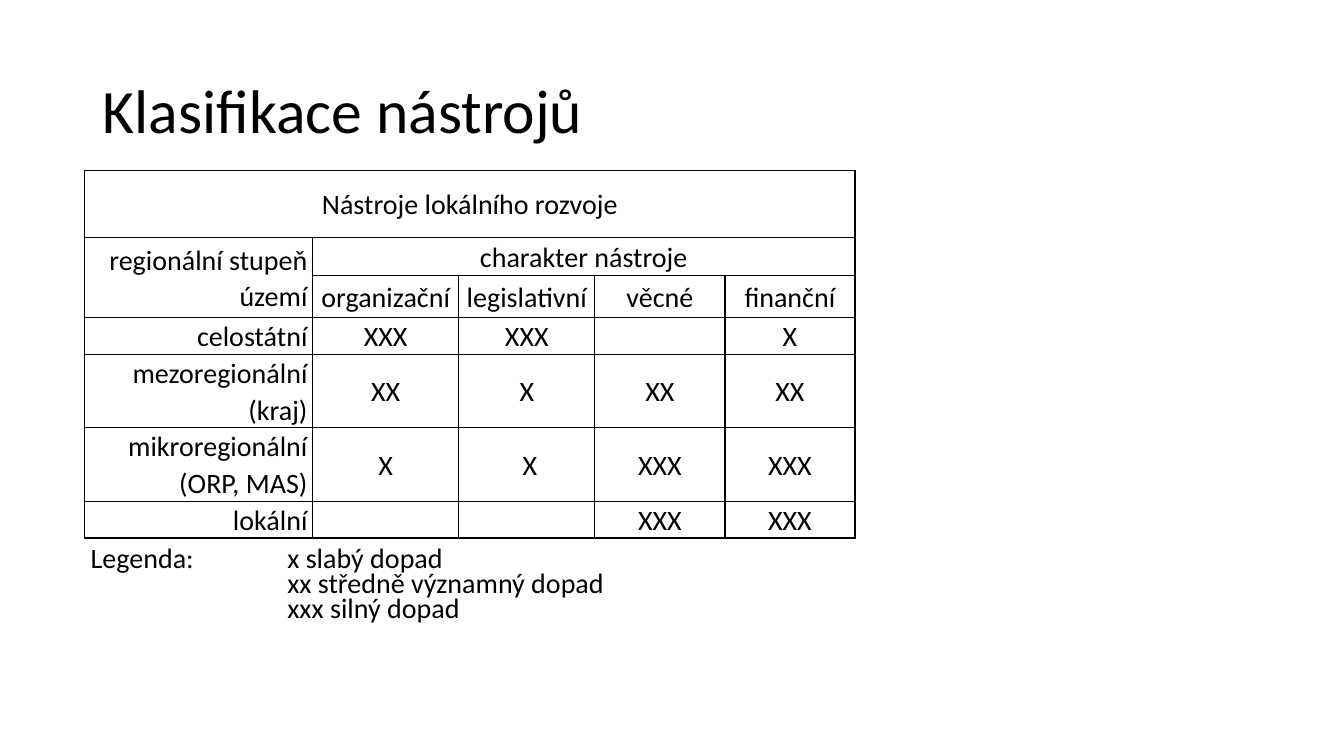
from dataclasses import dataclass

from lxml.etree import SubElement
from pptx import Presentation
from pptx.dml.color import RGBColor
from pptx.enum.text import MSO_ANCHOR, MSO_AUTO_SIZE, PP_ALIGN
from pptx.oxml.ns import qn
from pptx.util import Inches, Pt

COLORS = {"ink": "000000"}
FONT = "Calibri"
COLS = [2.26, 1.45, 1.35, 1.29, 1.29]
ROWS = [0.67, 0.37, 0.42, 0.36, 0.73, 0.73, 0.36]
LEGEND = [
    "Legenda:\tx slabý dopad",
    "\txx středně významný dopad",
    "\txxx silný dopad",
]


@dataclass
class Entry:
    row: int
    texts: list[str]
    col: int = 0
    down: int = 1
    across: int = 1


ENTRIES = [
    Entry(0, ["Nástroje lokálního rozvoje"], across=5),
    Entry(1, ["regionální stupeň území"], down=2),
    Entry(1, ["charakter nástroje"], col=1, across=4),
    Entry(2, ["organizační", "legislativní", "věcné", "finanční"], col=1),
    Entry(3, ["celostátní", "XXX", "XXX", "", "X"]),
    Entry(4, ["mezoregionální (kraj)", "XX", "X", "XX", "XX"]),
    Entry(5, ["mikroregionální (ORP, MAS)", "X", " X", "XXX", "XXX"]),
    Entry(6, ["lokální", "", "", "XXX", "XXX"]),
]


def style(font, size: float) -> None:
    font.name = FONT
    font.size = Pt(size)
    font.color.rgb = RGBColor.from_string(COLORS["ink"])


def frame_cell(cell) -> None:
    props = cell._tc.get_or_add_tcPr()
    for side in ("lnL", "lnR", "lnT", "lnB"):
        line = SubElement(props, qn(f"a:{side}"), w=str(Pt(1)))
        fill = SubElement(line, qn("a:solidFill"))
        SubElement(fill, qn("a:srgbClr"), val=COLORS["ink"])
    cell.fill.background()
    cell.margin_left = cell.margin_right = Inches(0.05)
    cell.margin_top = cell.margin_bottom = 0
    cell.vertical_anchor = MSO_ANCHOR.MIDDLE
    style(cell.text_frame.paragraphs[0].font, 20)


def write_cell(cell, text: str, align: PP_ALIGN) -> None:
    cell.text_frame.text = text
    para = cell.text_frame.paragraphs[0]
    para.alignment = align
    para.line_spacing = 1.07
    style(para.font, 20)
    for run in para.runs:
        style(run.font, 20)


def add_title(slide) -> None:
    title = slide.shapes.title
    title.left, title.top = Inches(0.92), Inches(0.4)
    title.width, title.height = Inches(11.5), Inches(1.45)
    frame = title.text_frame
    frame.text = "Klasifikace nástrojů"
    frame.auto_size = MSO_AUTO_SIZE.NONE
    frame.vertical_anchor = MSO_ANCHOR.MIDDLE
    para = frame.paragraphs[0]
    para.alignment = PP_ALIGN.LEFT
    para.line_spacing = 0.9
    style(para.runs[0].font, 44)


def add_grid(slide) -> None:
    grid = slide.shapes.add_table(
        len(ROWS), len(COLS), Inches(0.84), Inches(1.69),
        Inches(sum(COLS)), Inches(sum(ROWS))).table
    grid.first_row = grid.horz_banding = False
    for col, width in zip(grid.columns, COLS):
        col.width = Inches(width)
    for row, height in zip(grid.rows, ROWS):
        row.height = Inches(height)
    for cell in grid.iter_cells():
        frame_cell(cell)

    for entry in ENTRIES:
        first = grid.cell(entry.row, entry.col)
        if entry.down * entry.across > 1:
            first.merge(grid.cell(entry.row + entry.down - 1,
                                  entry.col + entry.across - 1))
        for col, text in enumerate(entry.texts, entry.col):
            side = col == 0 and entry.row > 0
            write_cell(grid.cell(entry.row, col), text,
                       PP_ALIGN.RIGHT if side else PP_ALIGN.CENTER)
    grid.cell(0, 0).text_frame.paragraphs[0].space_after = Pt(8)


def add_legend(slide) -> None:
    box = slide.shapes.add_textbox(
        Inches(0.75), Inches(5.48), Inches(6.67), Inches(0.81))
    frame = box.text_frame
    frame.word_wrap = True
    frame.auto_size = MSO_AUTO_SIZE.SHAPE_TO_FIT_TEXT
    frame.margin_left = Inches(0.15)
    frame.text = "\n".join(LEGEND)
    for num, para in enumerate(frame.paragraphs):
        para.alignment = PP_ALIGN.JUSTIFY
        para.line_spacing = Pt(12)
        if num:
            para.space_before = Pt(6)
        tabs = SubElement(para._p.get_or_add_pPr(), qn("a:tabLst"))
        SubElement(tabs, qn("a:tab"), pos=str(Inches(1.95)), algn="l")
        for run in para.runs:
            style(run.font, 20)


def main() -> None:
    deck = Presentation()
    deck.slide_width, deck.slide_height = Inches(13.33), Inches(7.5)
    slide = deck.slides.add_slide(deck.slide_layouts[5])
    # Heading
    add_title(slide)
    # Table of tools
    add_grid(slide)
    # Key to the marks
    add_legend(slide)
    deck.save("out.pptx")


if __name__ == "__main__":
    main()
